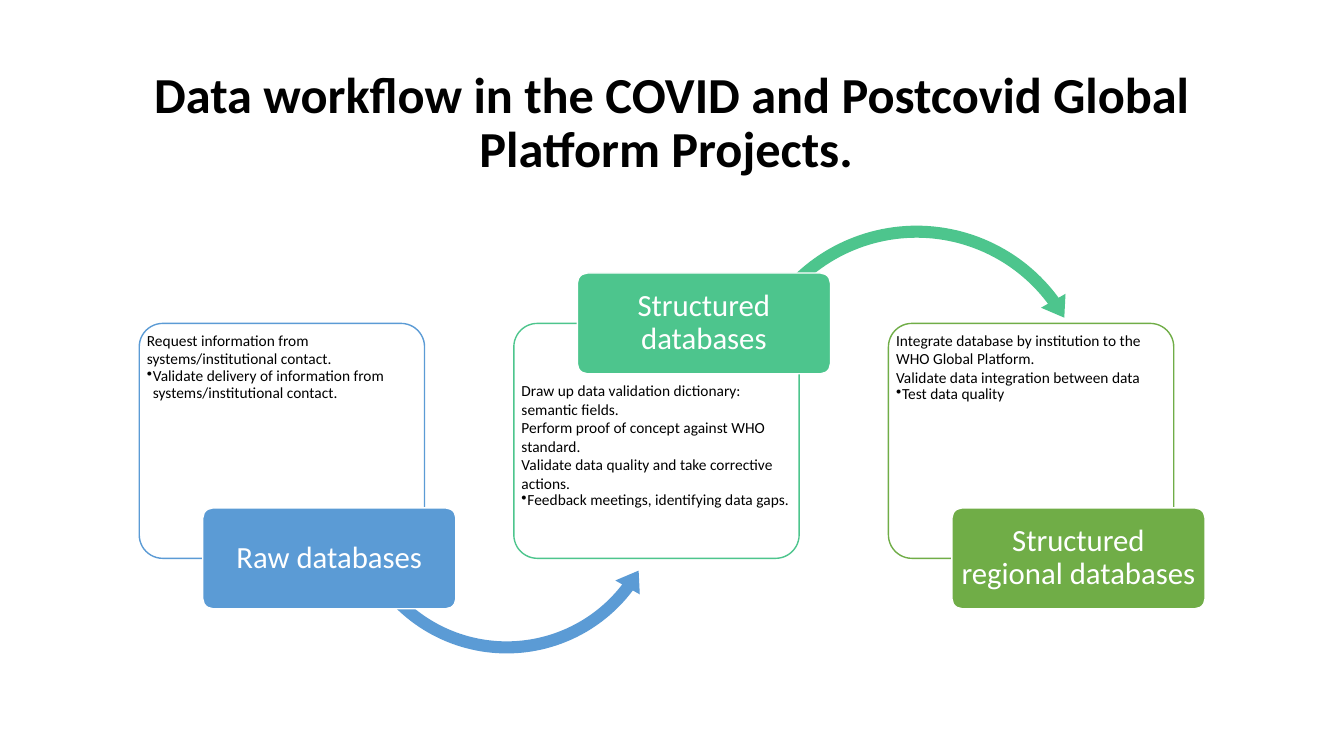
from lxml.etree import SubElement
from pptx import Presentation
from pptx.dml.color import RGBColor
from pptx.enum.shapes import MSO_SHAPE as Shape
from pptx.enum.text import MSO_ANCHOR as Anchor, MSO_AUTO_SIZE as AutoSize, PP_ALIGN as Align
from pptx.oxml.ns import qn
from pptx.util import Cm, Pt

COLORS = {"white": "FFFFFF", "black": "000000", "raw": "5B9BD5",
          "structured": "4DC58D", "regional": "70AD47"}
PANEL_W, PANEL_H = 7.19, 5.92
LABEL_W, LABEL_H, LABEL_SHIFT = 6.38, 2.54, 1.6
ARROW_THICKNESS, ARROW_HEAD = 0.305, 0.355
FIRST_LEFT, PANEL_TOP, STEP = 3.51, 8.15, 9.44

STAGES = [
    {"label": "Raw databases", "color": "raw", "label_on_top": False,
     "tasks": ["Request information from systems/institutional contact.",
               "Validate delivery of information from systems/institutional contact."],
     "arrow": {"kind": Shape.LEFT_CIRCULAR_ARROW, "center": (9.26, 4.34),
               "size": 8.36, "angles": (4.57, 22.33, 90.25)}},
    {"label": "Structured databases", "color": "structured", "label_on_top": True,
     "tasks": ["Draw up data validation dictionary: semantic fields.",
               "Perform proof of concept against WHO standard.",
               "Validate data quality and take corrective actions.",
               "Feedback meetings, identifying data gaps."],
     "arrow": {"kind": Shape.CIRCULAR_ARROW, "center": (10.15, 1.97),
               "size": 9.27, "angles": (4.09, 194.16, 125.76)}},
    {"label": "Structured regional databases", "color": "regional", "label_on_top": False,
     "tasks": ["Integrate database by institution to the WHO Global Platform.",
               "Validate data integration between data",
               "Test data quality"],
     "arrow": None},
]


def rgb(name):
    """Return the named colour."""
    return RGBColor.from_string(COLORS[name])


def style_font(paragraph, size, color, bold=False):
    """Format every run of a paragraph."""
    for run in paragraph.runs:
        run.font.name, run.font.size, run.font.bold = "Calibri", Pt(size), bold
        run.font.color.rgb = rgb(color)


def set_margins(frame, left, top, right, bottom):
    """Set the four insets of a text frame in centimetres."""
    frame.margin_left, frame.margin_top = Cm(left), Cm(top)
    frame.margin_right, frame.margin_bottom = Cm(right), Cm(bottom)


def add_plain_shape(slide, kind, left, top, width, height, fill, line=None):
    """Add a flat shape with the given fill and optional outline."""
    shape = slide.shapes.add_shape(kind, Cm(left), Cm(top), Cm(width), Cm(height))
    shape.shadow.inherit = False
    shape.fill.solid()
    shape.fill.fore_color.rgb = rgb(fill)
    if line:
        shape.line.color.rgb = rgb(line)
        shape.line.width = Pt(1)
    else:
        shape.line.fill.background()
    return shape


def add_bullet(paragraph):
    """Give a paragraph a hanging round bullet."""
    properties = paragraph._p.get_or_add_pPr()
    properties.set("marL", str(Cm(0.15)))
    properties.set("indent", str(-Cm(0.15)))
    SubElement(properties, qn("a:buChar")).set("char", "•")


def add_panel(slide, left, top, stage):
    """Draw the outlined panel that lists the tasks of a stage."""
    panel = add_plain_shape(slide, Shape.ROUNDED_RECTANGLE, left, top, PANEL_W, PANEL_H,
                            "white", stage["color"])
    panel.adjustments[0] = 0.1
    frame = panel.text_frame
    frame.word_wrap = True
    frame.vertical_anchor = Anchor.TOP
    label_space = LABEL_H / 2 if stage["label_on_top"] else 0
    set_margins(frame, 0.02, 0.02 + label_space, 0.02, 0.02)
    frame.text = "\n".join(stage["tasks"])
    for task in frame.paragraphs:
        task.alignment = Align.LEFT
        style_font(task, 11, "black")
    last_task = frame.paragraphs[-1]
    add_bullet(last_task)
    last_task.line_spacing = 0.9


def add_arrow(slide, left, top, stage):
    """Draw the curved arrow that leads to the next stage."""
    arrow = stage["arrow"]
    size = arrow["size"]
    center_x, center_y = arrow["center"]
    curve = add_plain_shape(slide, arrow["kind"], left + center_x - size / 2,
                            top + center_y - size / 2, size, size, stage["color"])
    settings = (ARROW_THICKNESS / size, *arrow["angles"], ARROW_HEAD / size)
    for index, value in enumerate(settings):
        curve.adjustments[index] = value


def add_label(slide, left, top, stage):
    """Draw the name of a stage, centred on the panel's top or bottom edge."""
    edge = top if stage["label_on_top"] else top + PANEL_H
    label = add_plain_shape(slide, Shape.ROUNDED_RECTANGLE, left + LABEL_SHIFT,
                            edge - LABEL_H / 2, LABEL_W, LABEL_H, stage["color"], "white")
    label.adjustments[0] = 0.1
    frame = label.text_frame
    frame.word_wrap = True
    frame.vertical_anchor = Anchor.MIDDLE
    set_margins(frame, 0.13, 0.08, 0.13, 0.08)
    frame.text = stage["label"]
    name = frame.paragraphs[0]
    name.alignment = Align.CENTER
    name.line_spacing = 0.9
    style_font(name, 22, "white")


def add_stage(slide, left, top, stage):
    """Draw one stage of the workflow."""
    add_panel(slide, left, top, stage)
    if stage["arrow"]:
        add_arrow(slide, left, top, stage)
    add_label(slide, left, top, stage)


def add_title(slide, left, top, width, height):
    """Place and format the slide title."""
    title = slide.shapes.title
    title.left, title.top, title.width, title.height = Cm(left), Cm(top), Cm(width), Cm(height)
    frame = title.text_frame
    frame.text = "Data workflow in the COVID and Postcovid Global Platform Projects. "
    frame.word_wrap = True
    frame.auto_size = AutoSize.NONE
    frame.vertical_anchor = Anchor.MIDDLE
    heading = frame.paragraphs[0]
    heading.alignment = Align.CENTER
    heading.line_spacing = 0.9
    heading.space_after = Pt(6)
    style_font(heading, 36, "black", bold=True)


def main():
    """Build and save the workflow slide."""
    deck = Presentation()
    deck.slide_width, deck.slide_height = Cm(33.87), Cm(19.05)
    slide = deck.slides.add_slide(deck.slide_layouts[5])
    add_title(slide, 2.33, 1.55, 29.21, 3.15)
    for index, stage in enumerate(STAGES):
        add_stage(slide, FIRST_LEFT + index * STEP, PANEL_TOP, stage)
    deck.save("out.pptx")


if __name__ == "__main__":
    main()
